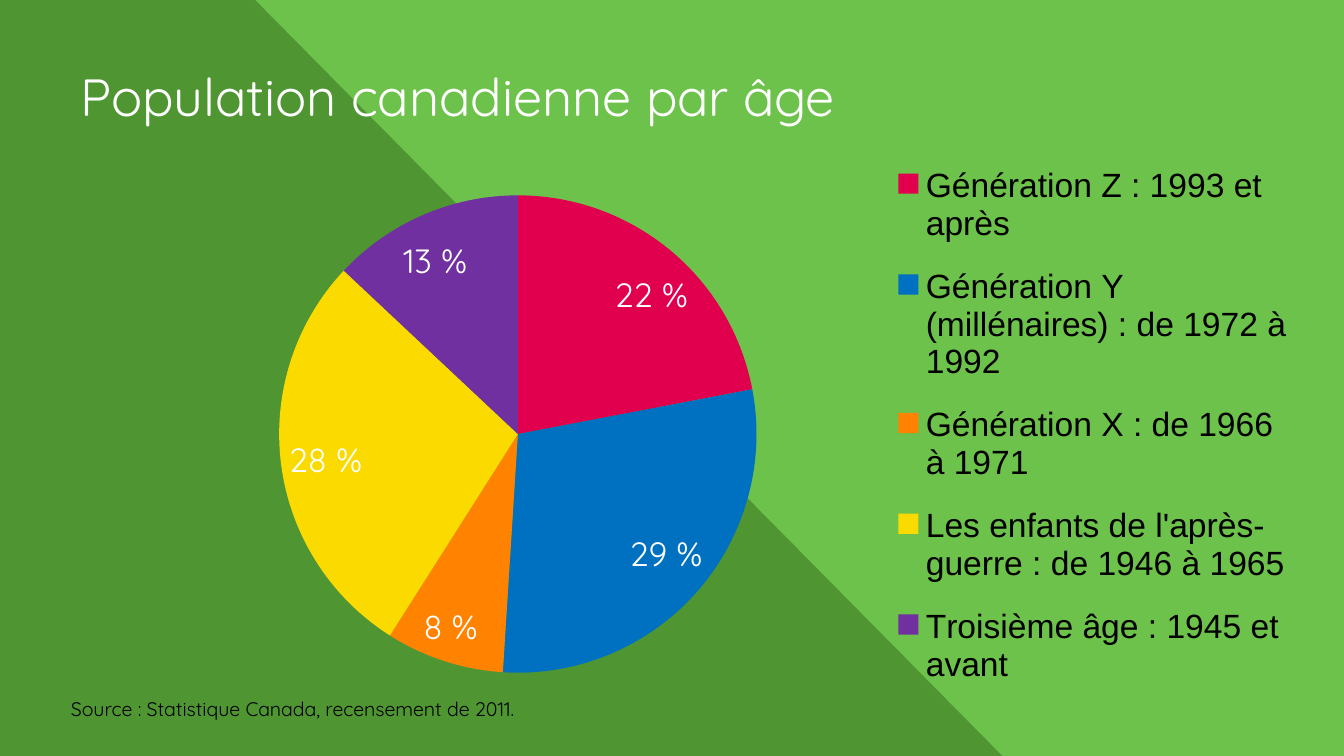
from lxml import etree
from pptx import Presentation
from pptx.chart.data import CategoryChartData
from pptx.dml.color import RGBColor
from pptx.enum.chart import XL_CHART_TYPE, XL_LABEL_POSITION, XL_LEGEND_POSITION
from pptx.enum.shapes import MSO_SHAPE
from pptx.enum.text import MSO_ANCHOR, MSO_AUTO_SIZE, PP_ALIGN
from pptx.oxml.ns import qn
from pptx.util import Inches, Pt

WIDTH = 10
HEIGHT = WIDTH * 9 / 16
COLORS = {
    "dark_green": "4F9633",
    "light_green": "6CC24A",
    "white": "FFFFFF",
    "black": "000000",
    "crimson": "E0004D",
    "blue": "0070C0",
    "orange": "FF8200",
    "yellow": "FBDA00",
    "purple": "7030A0",
}
GENERATIONS = [
    ("Génération Z : 1993 et après", 22, "crimson", (0.02, 0.03)),
    ("Génération Y (millénaires) : de 1972 à 1992", 29, "blue", (0.01, -0.02)),
    ("Génération X : de 1966 à 1971", 8, "orange", (-0.02, -0.01)),
    ("Les enfants de l'après-guerre : de 1946 à 1965", 28, "yellow", (0, 0.03)),
    ("Troisième âge : 1945 et avant", 13, "purple", (-0.02, 0.03)),
]


def style_font(font, name, size, color):
    font.name = name
    font.size = Pt(size)
    font.color.rgb = RGBColor.from_string(COLORS[color])


def paint(fill, color):
    fill.solid()
    fill.fore_color.rgb = RGBColor.from_string(COLORS[color])


def paint_shape(shape, color):
    paint(shape.fill, color)
    shape.line.fill.background()
    shape.shadow.inherit = False


def add_backdrop(page):
    base = page.shapes.add_shape(
        MSO_SHAPE.RECTANGLE, 0, 0, Inches(WIDTH), Inches(HEIGHT)
    )
    paint_shape(base, "dark_green")
    builder = page.shapes.build_freeform(Inches(1.9), 0)
    corners = [(WIDTH, 0), (WIDTH, HEIGHT), (7.46, HEIGHT)]
    builder.add_line_segments([(Inches(x), Inches(y)) for x, y in corners])
    paint_shape(builder.convert_to_shape(), "light_green")


def fill_text(box, text, size, color, vertical_inset):
    frame = box.text_frame
    frame.text = text
    frame.word_wrap = True
    frame.auto_size = MSO_AUTO_SIZE.NONE
    frame.margin_left = frame.margin_right = Inches(0.1)
    frame.margin_top = frame.margin_bottom = Inches(vertical_inset)
    para = frame.paragraphs[0]
    para.alignment = PP_ALIGN.LEFT
    style_font(para.runs[0].font, "Quicksand", size, color)


def place_title(page, text):
    title = page.shapes.title
    title.left, title.top = Inches(0.5), Inches(0.51)
    title.width, title.height = Inches(6.16), Inches(0.4)
    fill_text(title, text, 28, "white", 0.1)
    title.text_frame.vertical_anchor = MSO_ANCHOR.MIDDLE
    page.shapes.element.append(title.element)


def add_source_note(page, text):
    box = page.shapes.add_textbox(
        Inches(0.43), Inches(5.14), Inches(6.04), Inches(0.24)
    )
    fill_text(box, text, 10.5, "black", 0.05)


def set_layout(part, position, **settings):
    for old in part.findall(qn("c:layout")):
        part.remove(old)
    layout = etree.Element(qn("c:layout"))
    manual = etree.SubElement(layout, qn("c:manualLayout"))
    for tag, value in settings.items():
        etree.SubElement(manual, qn(f"c:{tag}")).set("val", str(value))
    part.insert(position, layout)


def label_slice(point, share, offset):
    label = point.data_label
    label.text_frame.text = f"{share} %"
    span = label.text_frame.paragraphs[0].runs[0]
    style_font(span.font, "Quicksand", 18, "white")
    label.position = XL_LABEL_POSITION.INSIDE_END
    return offset


def add_age_pie(page):
    data = CategoryChartData()
    data.categories = [generation[0] for generation in GENERATIONS]
    data.add_series("Series 1", [generation[1] for generation in GENERATIONS])
    chart = page.shapes.add_chart(
        XL_CHART_TYPE.PIE,
        Inches(1.16), Inches(1.01), Inches(8.55), Inches(4.44),
        data,
    ).chart
    chart.has_title = False
    style_font(chart.font, "Arial", 18, "black")

    plot = chart.plots[0]
    plot.vary_by_categories = True
    for index, (name, share, color, offset) in enumerate(GENERATIONS):
        point = plot.series[0].points[index]
        paint(point.format.fill, color)
        label_slice(point, share, offset)
    labels = chart.element.findall(".//" + qn("c:dLbl"))
    for label, generation in zip(labels, GENERATIONS):
        x, y = generation[3]
        set_layout(label, 1, x=x, y=y)

    chart.has_legend = True
    legend = chart.legend
    legend.position = XL_LEGEND_POSITION.RIGHT
    legend.include_in_layout = False
    style_font(legend.font, "Arial", 18, "black")

    set_layout(
        chart.element.find(".//" + qn("c:legend")), 1,
        xMode="edge", yMode="edge", x=0.64, y=0.01, w=0.35, h=0.95,
    )
    set_layout(
        chart.element.find(".//" + qn("c:plotArea")), 0,
        layoutTarget="inner", xMode="edge", yMode="edge",
        x=0.1, y=0.1, w=0.43, h=0.8,
    )


def main():
    deck = Presentation()
    deck.slide_width, deck.slide_height = Inches(WIDTH), Inches(HEIGHT)
    page = deck.slides.add_slide(deck.slide_layouts[5])
    add_backdrop(page)
    place_title(page, "Population canadienne par âge")
    add_source_note(page, "Source : Statistique Canada, recensement de 2011.")
    add_age_pie(page)
    deck.save("out.pptx")


if __name__ == "__main__":
    main()
